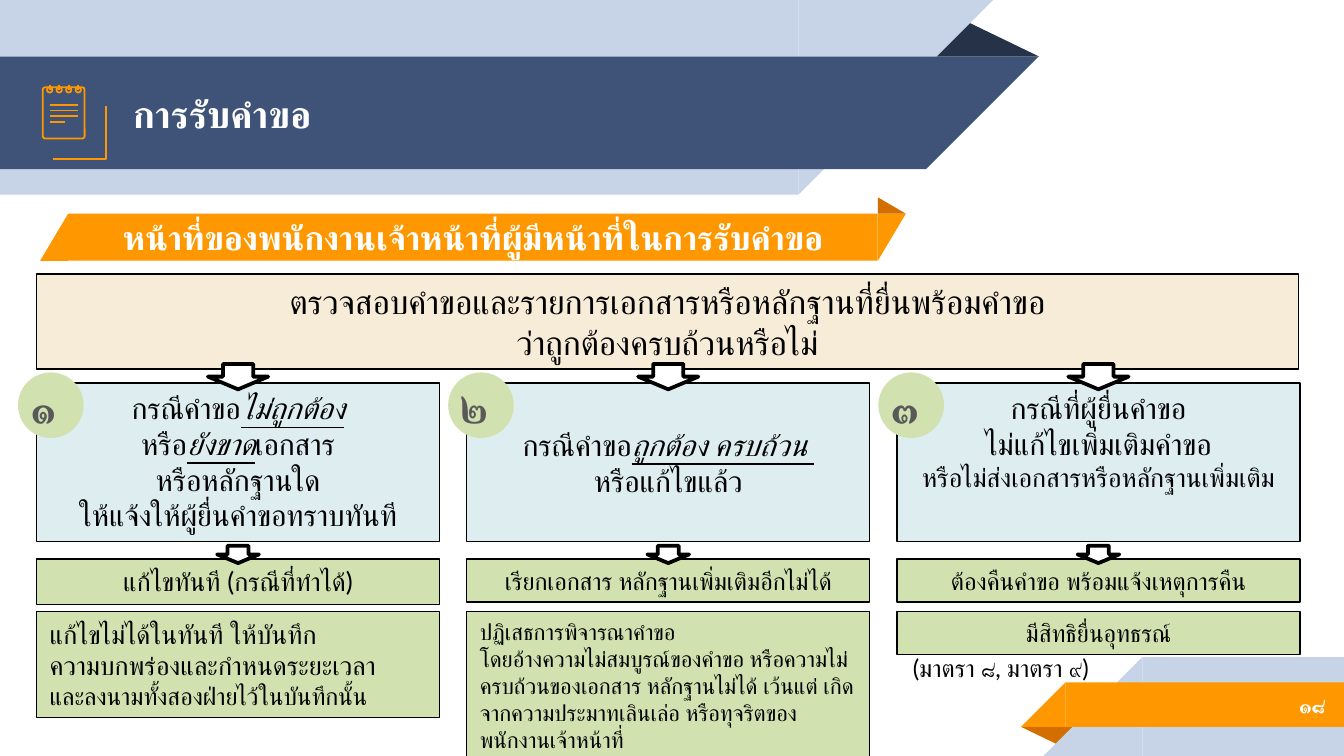
from lxml import etree
from pptx import Presentation
from pptx.dml.color import RGBColor
from pptx.enum import shapes, text
from pptx.oxml.ns import qn
from pptx.util import Cm, Pt

SHAPE = shapes.MSO_SHAPE
ALIGN = text.PP_ALIGN
ANCHOR = text.MSO_ANCHOR

FONT = "Lato"
WHITE = RGBColor(0xFF, 0xFF, 0xFF)
BLACK = RGBColor(0, 0, 0)
GREY = RGBColor(0x59, 0x59, 0x59)
NAVY = RGBColor(0x3F, 0x53, 0x78)
DARK_NAVY = RGBColor(0x26, 0x32, 0x48)
PALE_BLUE = RGBColor(0xC7, 0xD3, 0xE6)
ORANGE = RGBColor(0xFF, 0x98, 0x00)
DARK_ORANGE = RGBColor(0xD2, 0x6F, 0x00)
CREAM = RGBColor(0xF7, 0xEC, 0xD7)
ICE = RGBColor(0xDD, 0xED, 0xF0)
GREEN = RGBColor(0xD2, 0xE1, 0xB0)

COL_X, COL_W, COL_STEP = 0.69, 7.62, 8.13
CASE_Y, ACTION_Y, RESULT_Y = 7.24, 10.57, 11.56

# Per column: number, case (anchor, paragraphs), action (height, size, text),
# result (height, alignment, paragraphs). Underscores enclose emphasised words.
COLUMNS = [
    ("๑",
     (ANCHOR.TOP, [("กรณีคำขอ_ไม่ถูกต้อง_", 16), ("หรือ_ยังขาด_เอกสาร", 16),
                   ("หรือหลักฐานใด", 16), ("ให้แจ้งให้ผู้ยื่นคำขอทราบทันที", 16)]),
     (0.86, 14, "แก้ไขทันที (กรณีที่ทำได้)"),
     (2.01, ALIGN.LEFT, [("แก้ไขไม่ได้ในทันที ให้บันทึก", 14),
                         ("ความบกพร่องและกำหนดระยะเวลา", 14),
                         ("และลงนามทั้งสองฝ่ายไว้ในบันทึกนั้น", 13)])),
    ("๒",
     (ANCHOR.MIDDLE, [("กรณีคำขอ_ถูกต้อง ครบถ้วน _", 16), ("หรือแก้ไขแล้ว", 16)]),
     (0.81, 13, "เรียกเอกสาร หลักฐานเพิ่มเติมอีกไม่ได้"),
     (2.82, ALIGN.LEFT, [("ปฏิเสธการพิจารณาคำขอ", 12),
                         ("โดยอ้างความไม่สมบูรณ์ของคำขอ หรือความไม่ครบถ้วนของเอกสาร "
                          "หลักฐานไม่ได้ เว้นแต่ เกิดจากความประมาทเลินเล่อ "
                          "หรือทุจริตของพนักงานเจ้าหน้าที่", 12)])),
    ("๓",
     (ANCHOR.TOP, [("กรณีที่ผู้ยื่นคำขอ", 16), ("ไม่แก้ไขเพิ่มเติมคำขอ", 16),
                   ("หรือไม่ส่งเอกสารหรือหลักฐานเพิ่มเติม", 14)]),
     (0.81, 13, "ต้องคืนคำขอ พร้อมแจ้งเหตุการคืน"),
     (0.81, ALIGN.CENTER, [("มีสิทธิยื่นอุทธรณ์", 13)])),
]


def cm(*values):
    return [Cm(v) for v in values]


def paint(sp, fill=None, line=None, width=0.75):
    sp.shadow.inherit = False
    if fill is None:
        sp.fill.background()
    else:
        sp.fill.solid()
        sp.fill.fore_color.rgb = fill
    if line is None:
        sp.line.fill.background()
    else:
        sp.line.color.rgb = line
        sp.line.width = Pt(width)


def add_shape(s, kind, box, fill=None, line=None, width=0.75):
    sp = s.shapes.add_shape(kind, *cm(*box))
    paint(sp, fill, line, width)
    return sp


def write(sp, paragraphs, color=BLACK, bold=False, align=ALIGN.CENTER,
          anchor=ANCHOR.TOP, inset=None, wrap=True):
    """Fill a shape with (text, size) paragraphs."""
    tf = sp.text_frame
    tf.word_wrap = wrap
    tf.vertical_anchor = anchor
    if inset is not None:
        tf.margin_left = tf.margin_right = tf.margin_top = tf.margin_bottom = Cm(inset)
    for i, (line, size) in enumerate(paragraphs):
        p = tf.paragraphs[0] if i == 0 else tf.add_paragraph()
        p.alignment = align
        p.font.size = Pt(size)
        p.font.bold = bold
        p.font.color.rgb = color
        p.font.name = FONT
        # Thai script takes its typeface from a:cs
        etree.SubElement(p.font._element, qn("a:cs")).set("typeface", FONT)
        for j, part in enumerate(line.split("_")):
            if part:
                r = p.add_run()
                r.text = part
                if j % 2:
                    r.font.italic = r.font.underline = True


def add_text(s, box, paragraphs, **style):
    write(s.shapes.add_textbox(*cm(*box)), paragraphs, **style)


def add_corner(s, box, fill, top_left=False):
    """Right triangle with its square corner at bottom right or top left."""
    sp = add_shape(s, SHAPE.RIGHT_TRIANGLE, box, fill)
    sp._element.spPr.find(qn("a:xfrm")).set("flipH", "1")
    sp.rotation = 180 if top_left else 0


def add_fold(s, box, fill, apex, rotation=0):
    sp = add_shape(s, SHAPE.ISOSCELES_TRIANGLE, box, fill)
    sp.adjustments[0] = apex
    sp.rotation = rotation


def add_line(s, x1, y1, x2, y2):
    ln = s.shapes.add_connector(shapes.MSO_CONNECTOR.STRAIGHT, *cm(x1, y1, x2, y2))
    ln.line.color.rgb = ORANGE
    ln.line.width = Pt(0.96)
    etree.SubElement(ln._element.spPr, qn("a:effectLst"))


def add_arrow(s, center_x, center_y, w, h):
    box = (center_x - w / 2, center_y - h / 2, w, h)
    add_shape(s, SHAPE.DOWN_ARROW, box, WHITE, BLACK, 2)


def add_ribbons(s):
    # Top ribbon
    add_fold(s, (17.48, 0.36, 2.16, 0.71), DARK_NAVY, 0.32)
    for y, w, h, fill in ((0, 15.09, 3.68, PALE_BLUE), (1.07, 17.5, 2.13, NAVY)):
        add_shape(s, SHAPE.RECTANGLE, (0, y, w, h), fill)
        add_corner(s, (w, y, h, h), fill, top_left=True)
    # Bottom ribbon
    add_fold(s, (19.3, 13.74, 1.09, 0.36), DARK_ORANGE, 0.32, 180)
    for x, y, h, fill in ((21.59, 12.42, 1.87, PALE_BLUE), (20.14, 12.9, 0.84, ORANGE)):
        add_shape(s, SHAPE.RECTANGLE, (x, y, 25.4 - x, h), fill)
        add_corner(s, (x - h, y, h, h), fill)


def add_notepad(s):
    # Back page
    fb = s.shapes.build_freeform(0.89, 2.67, scale=Cm(1))
    fb.add_line_segments([(0.91, 2.7), (0.94, 2.72), (1.64, 2.72), (1.68, 2.67),
                          (1.68, 1.78), (1.65, 1.75)], close=False)
    paint(fb.convert_to_shape(), None, ORANGE, 0.96)
    # Front page
    page = add_shape(s, SHAPE.ROUNDED_RECTANGLE, (0.81, 1.65, 0.79, 0.97),
                     None, ORANGE, 0.96)
    page.adjustments[0] = 0.06
    # Rings and written lines
    for i in range(4):
        x, y = 0.94 + 0.18 * i, 1.98 + 0.11 * i
        add_shape(s, SHAPE.OVAL, (x - 0.05, 1.65, 0.1, 0.1), None, ORANGE, 0.96)
        add_line(s, x, 1.6, x, 1.7)
        add_line(s, 0.94, y, 1.22 if i == 3 else 1.47, y)


def add_heading(s):
    add_corner(s, (0.76, 4.04, 0.53, 0.89), ORANGE)
    bar = add_shape(s, SHAPE.RECTANGLE, (1.29, 4.04, 15.3, 0.89), ORANGE)
    write(bar, [("หน้าที่ของพนักงานเจ้าหน้าที่ผู้มีหน้าที่ในการรับคำขอ", 18)],
          WHITE, True, anchor=ANCHOR.MIDDLE, inset=0.25)
    add_corner(s, (16.59, 4.04, 0.53, 0.89), ORANGE, top_left=True)
    add_fold(s, (16.59, 3.73, 0.53, 0.31), DARK_ORANGE, 0)


def add_box(s, box, fill, paragraphs, **style):
    write(add_shape(s, SHAPE.RECTANGLE, box, fill, BLACK), paragraphs, **style)


def add_column(s, x, number, case, action, result):
    anchor, paragraphs = case
    add_box(s, (x, CASE_Y, COL_W, 3), ICE, paragraphs, anchor=anchor)
    # Number badge
    badge = add_shape(s, SHAPE.PIE, (x - 0.35, 7.04, 1.24, 1.24), GREEN)
    badge.adjustments[0], badge.adjustments[1] = 0, -90
    badge.rotation = 90
    write(badge, [(number, 24)], GREY, True, ALIGN.LEFT, ANCHOR.MIDDLE)
    badge.text_frame._txBody.bodyPr.set("vert", "vert270")
    # Action and result
    height, size, label = action
    add_box(s, (x, ACTION_Y, COL_W, height), GREEN, [(label, size)])
    height, align, paragraphs = result
    add_box(s, (x, RESULT_Y, COL_W, height), GREEN, paragraphs, align=align)
    # Arrows into the case and the action
    add_arrow(s, x + COL_W / 2, 7.12, 1.14, 0.48)
    add_arrow(s, x + COL_W / 2, 10.48, 0.79, 0.33)


def main():
    prs = Presentation()
    prs.slide_width, prs.slide_height = cm(25.4, 14.29)
    s = prs.slides.add_slide(prs.slide_layouts[5])
    add_ribbons(s)

    # Title, brought in front of the ribbon
    title = s.shapes.title
    title.left, title.top, title.width, title.height = cm(2.26, 1.09, 15.52, 2.13)
    write(title, [("การรับคำขอ", 20)], WHITE, True, ALIGN.LEFT, ANCHOR.MIDDLE, 0.25)
    s.shapes._spTree.append(title._element)

    add_text(s, (21.16, 12.88, 4.14, 0.89), [("๑๘", 12)], color=WHITE, bold=True,
             align=ALIGN.RIGHT, anchor=ANCHOR.MIDDLE, inset=0.25)
    add_notepad(s)
    add_heading(s)

    # Duty, then the three cases
    add_box(s, (COL_X, 5.18, 23.85, 1.8), CREAM,
            [("ตรวจสอบคำขอและรายการเอกสารหรือหลักฐานที่ยื่นพร้อมคำขอ", 18),
             ("ว่าถูกต้องครบถ้วนหรือไม่", 18)], anchor=ANCHOR.MIDDLE)
    for i, column in enumerate(COLUMNS):
        add_column(s, COL_X + i * COL_STEP, *column)
    add_text(s, (16.64, 12.22, 4.55, 0.81), [("(มาตรา ๘, มาตรา ๙)", 13)], wrap=False)
    prs.save("out.pptx")


if __name__ == "__main__":
    main()
